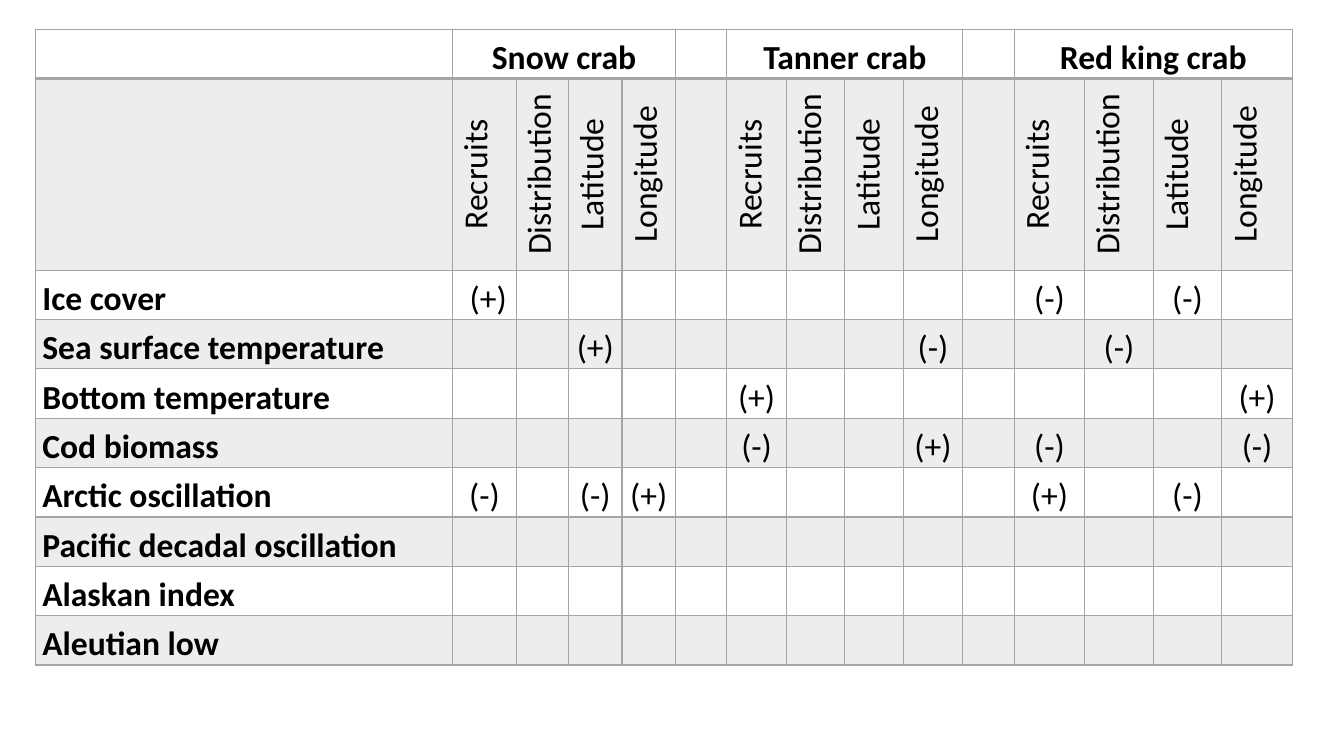
"""Build a slide with a table of crab responses to climate indices."""
from lxml.etree import SubElement
from pptx import Presentation
from pptx.dml.color import RGBColor
from pptx.enum.text import MSO_ANCHOR as Anchor, PP_ALIGN as Align
from pptx.oxml.ns import qn
from pptx.util import Pt

SCALE = 9144
SPECIES = ["Snow crab", "Tanner crab", "Red king crab"]
MEASURES = ["Recruits", "Distribution", "Latitude", "Longitude"]
EFFECTS = {
    "Ice cover": {1: " (+)", 11: "(-)", 13: "(-)"},
    "Sea surface temperature": {3: "(+)", 9: "(-)", 12: "(-)"},
    "Bottom temperature": {6: "(+)", 14: "(+)"},
    "Cod biomass": {6: "(-)", 9: "(+)", 11: "(-)", 14: "(-)"},
    "Arctic oscillation": {1: "(-)", 3: "(-)", 4: "(+)", 11: "(+)", 13: "(-)"},
    "Pacific decadal oscillation": {},
    "Alaskan index": {},
    "Aleutian low": {},
}
COLUMN_WIDTHS = [414, 63, 52, 53, 53, 51, 59, 58, 58, 59, 51, 70, 68, 68, 70]
ROW_HEIGHTS = [49, 190] + [49] * len(EFFECTS)
SLIDE_SIZE = (1333, 750)
TABLE_CORNER = (35, 29)
GRID, BAND, PLAIN, INK = "A5A5A5", "EDEDED", "FFFFFF", "000000"


def px(length):
    return length * SCALE


def color(code):
    return RGBColor.from_string(code)


def style_cell(cell, fill, bottom=1):
    properties = cell._tc.get_or_add_tcPr()
    for side, width in {"L": 1, "R": 1, "T": 1, "B": bottom}.items():
        line = SubElement(properties, qn(f"a:ln{side}"), w=str(Pt(width)))
        paint = SubElement(line, qn("a:solidFill"))
        SubElement(paint, qn("a:srgbClr"), val=GRID)
    cell.fill.solid()
    cell.fill.fore_color.rgb = color(fill)
    cell.vertical_anchor = Anchor.BOTTOM
    cell.margin_left = cell.margin_right = px(7)
    cell.margin_top = cell.margin_bottom = 0


def write(cell, text, bold=False, align=Align.CENTER, upright=False):
    if upright:
        cell._tc.get_or_add_tcPr().set("vert", "vert270")
    para = cell.text_frame.paragraphs[0]
    para.alignment = align
    para.line_spacing = 1.07
    span = para.add_run()
    span.text = text
    span.font.name = "Calibri"
    span.font.size = Pt(24)
    span.font.bold = bold
    span.font.color.rgb = color(INK)


def add_grid(page):
    frame = page.shapes.add_table(
        len(ROW_HEIGHTS), len(COLUMN_WIDTHS), *map(px, TABLE_CORNER),
        px(sum(COLUMN_WIDTHS)), px(sum(ROW_HEIGHTS)))
    table = frame.table
    table.first_row = table.horz_banding = False
    for column, width in zip(table.columns, COLUMN_WIDTHS):
        column.width = px(width)
    for index, (row, height) in enumerate(zip(table.rows, ROW_HEIGHTS)):
        row.height = px(height)
        for cell in row.cells:
            style_cell(cell, BAND if index % 2 else PLAIN, 1 if index else 2)
    return table


def main():
    deck = Presentation()
    deck.slide_width, deck.slide_height = map(px, SLIDE_SIZE)
    page = deck.slides.add_slide(deck.slide_layouts[6])
    table = add_grid(page)

    for group, species in enumerate(SPECIES):
        first = 1 + group * (len(MEASURES) + 1)
        heading = table.cell(0, first)
        heading.merge(table.cell(0, first + len(MEASURES) - 1))
        write(heading, species, bold=True)
        for column, measure in enumerate(MEASURES, first):
            write(table.cell(1, column), measure, upright=True)

    for row, (driver, signs) in enumerate(EFFECTS.items(), 2):
        write(table.cell(row, 0), driver, bold=True, align=Align.LEFT)
        for column, sign in signs.items():
            write(table.cell(row, column), sign)

    deck.save("out.pptx")


if __name__ == "__main__":
    main()
